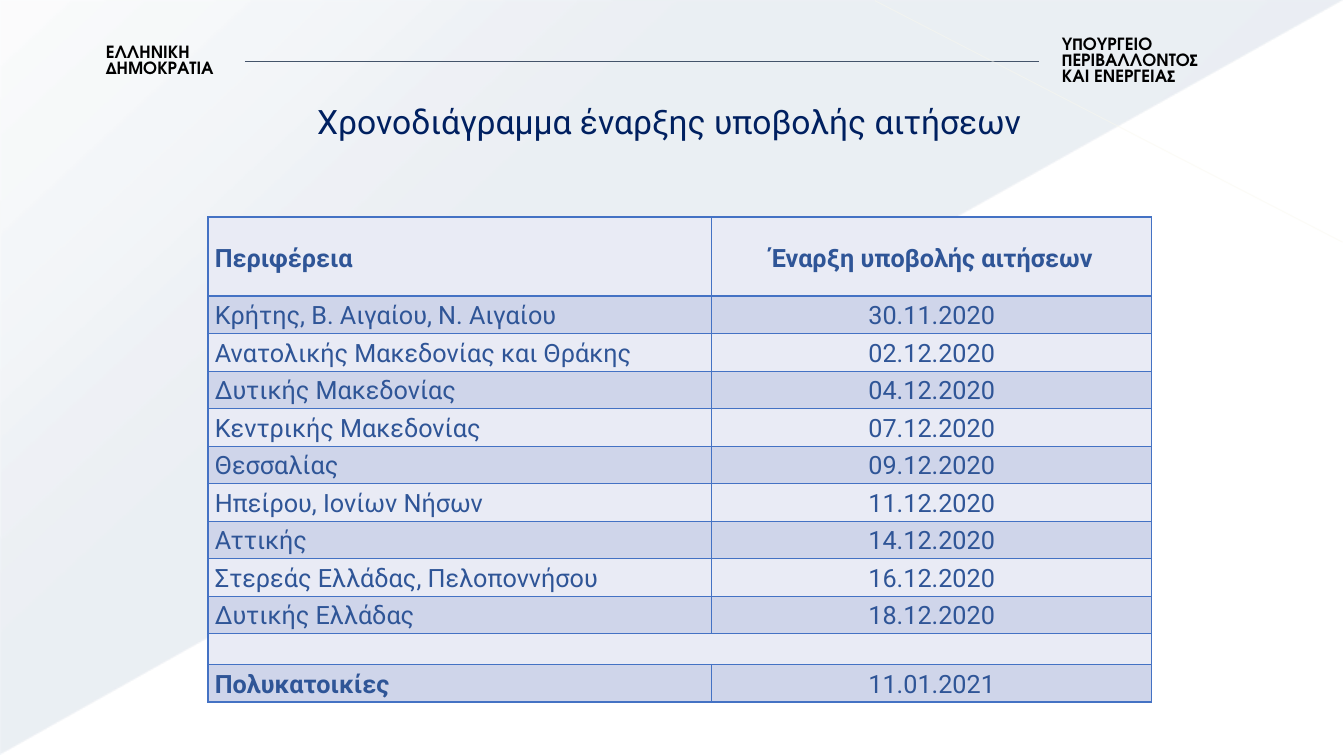
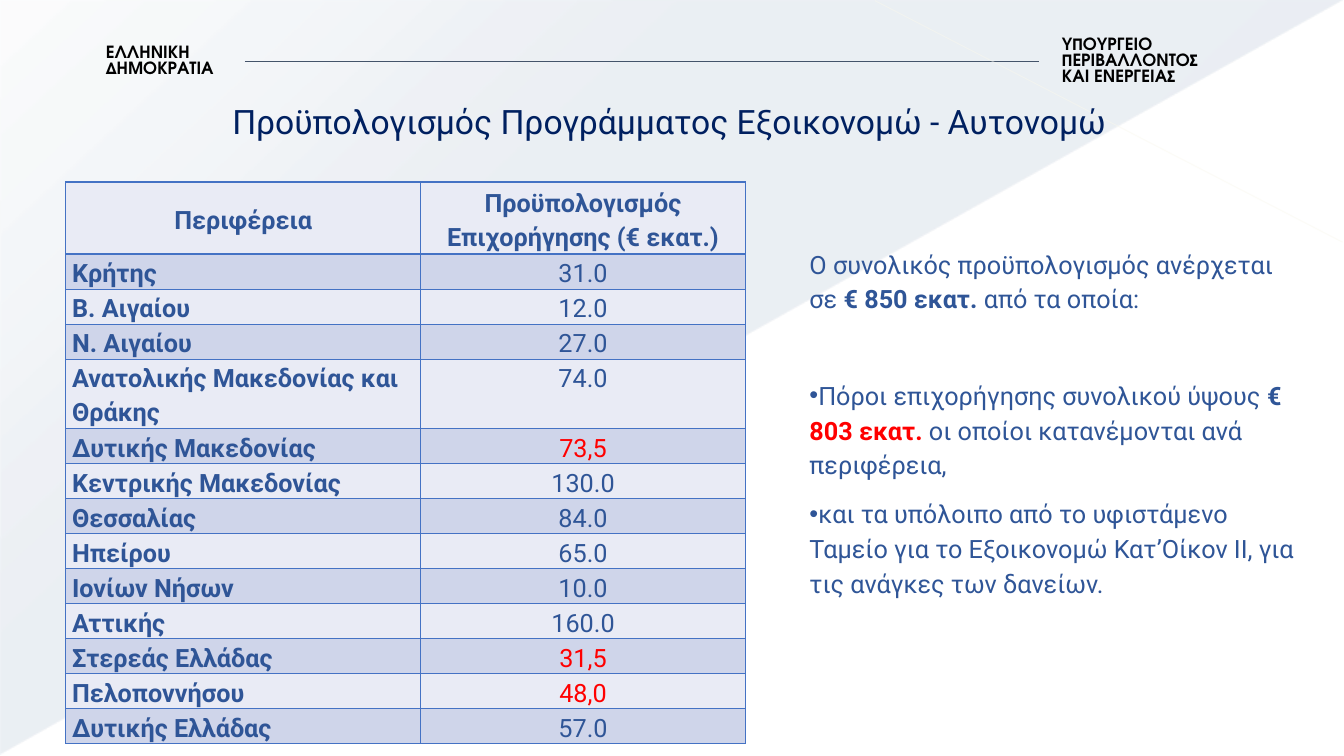
from lxml import etree
from pptx import Presentation
from pptx.dml.color import RGBColor
from pptx.enum.shapes import MSO_CONNECTOR, MSO_SHAPE
from pptx.enum.text import MSO_ANCHOR, MSO_AUTO_SIZE, PP_ALIGN
from pptx.oxml import parse_xml
from pptx.oxml.ns import nsdecls, qn
from pptx.util import Pt

LEFT, CENTER = PP_ALIGN.LEFT, PP_ALIGN.CENTER
TOP, MIDDLE = MSO_ANCHOR.TOP, MSO_ANCHOR.MIDDLE
NO_FIT = MSO_AUTO_SIZE.NONE

COLORS = {
    "title": "002060",
    "text": "2F5597",
    "alert": "FF0000",
    "black": "000000",
    "rule": "44546A",
    "ray": "FAF8EE",
    "wedge": "1F497D",
    "border": "4472C4",
    "light": "E9EBF5",
    "dark": "CFD5EA",
}
BODY_FONT = "Roboto"
HEADER_FONT = "TeX Gyre Adventor"


def format_para(para, align, line_spacing, after=0, before=0):
    para.alignment = align
    para.line_spacing = line_spacing
    para.space_before = Pt(before)
    para.space_after = Pt(after)


def format_span(span, size=18, color="text", bold=False, font=BODY_FONT):
    span.font.name = font
    span.font.size = Pt(size)
    span.font.bold = bold
    span.font.color.rgb = RGBColor.from_string(COLORS[color])


tables = [
    {
        "title": "Χρονοδιάγραμμα έναρξης υποβολής αιτήσεων",
        "left": 148.5, "top": 155, "columns": [360, 314], "inset": 5,
        "heights": [56.5] + [26.8] * 9 + [22, 26.8],
        "header_align": LEFT, "bold_rows": [0, 11],
        "rows": [
            ("Περιφέρεια", "Έναρξη υποβολής αιτήσεων"),
            ("Κρήτης, Β. Αιγαίου, Ν. Αιγαίου", "30.11.2020"),
            ("Ανατολικής Μακεδονίας και Θράκης", "02.12.2020"),
            ("Δυτικής Μακεδονίας", "04.12.2020"),
            ("Κεντρικής Μακεδονίας", "07.12.2020"),
            ("Θεσσαλίας", "09.12.2020"),
            ("Ηπείρου, Ιονίων Νήσων", "11.12.2020"),
            ("Αττικής", "14.12.2020"),
            ("Στερεάς Ελλάδας, Πελοποννήσου", "16.12.2020"),
            ("Δυτικής Ελλάδας", "18.12.2020"),
            None,
            ("Πολυκατοικίες", "11.01.2021"),
        ],
        "notes": [],
    },
    {
        "title": "Προϋπολογισμός Προγράμματος Εξοικονομώ - Αυτονομώ",
        "left": 47, "top": 130, "columns": [253.5, 232], "inset": 4.5,
        "heights": [51.5] + [24.9] * 3 + [49.5] + [24.9] * 9,
        "header_align": CENTER, "bold_rows": range(14),
        "rows": [
            ("Περιφέρεια", "Προϋπολογισμός Επιχορήγησης (€ εκατ.)"),
            ("Κρήτης", "31.0"),
            ("Β. Αιγαίου", "12.0"),
            ("Ν. Αιγαίου", "27.0"),
            ("Ανατολικής Μακεδονίας και Θράκης", "74.0"),
            ("Δυτικής Μακεδονίας", "73,5"),
            ("Κεντρικής Μακεδονίας", "130.0"),
            ("Θεσσαλίας", "84.0"),
            ("Ηπείρου", "65.0"),
            ("Ιονίων Νήσων", "10.0"),
            ("Αττικής", "160.0"),
            ("Στερεάς Ελλάδας", "31,5"),
            ("Πελοποννήσου", "48,0"),
            ("Δυτικής Ελλάδας", "57.0"),
        ],
        "notes": [
            (False, 0, [
                ("Ο συνολικός προϋπολογισμός ανέρχεται σε ", "text", False),
                ("€ 850 εκατ. ", "text", True),
                ("από τα οποία:", "text", False),
            ]),
            (True, 34, [
                ("Πόροι επιχορήγησης συνολικού ύψους ", "text", False),
                ("€ ", "text", True),
                ("803 εκατ. ", "alert", True),
                ("οι οποίοι κατανέμονται ανά περιφέρεια,", "text", False),
            ]),
            (True, 0, [
                ("και τα υπόλοιπο από το υφιστάμενο Ταμείο για το Εξοικονομώ "
                 "Κατ’Οίκον ΙΙ, για τις ανάγκες των δανείων.", "text", False),
            ]),
        ],
    },
]

deck = Presentation()
deck.slide_width, deck.slide_height = Pt(960), Pt(540)
layout = deck.slide_layouts[1]
for holder in list(layout.placeholders):
    if holder.placeholder_format.idx >= 10:
        holder.element.getparent().remove(holder.element)
layout_title, layout_body = layout.placeholders
for holder, (left, top, width, height) in (
    (layout_title, (64, 67.5, 828, 42)),
    (layout_body, (571, 171, 361.5, 263.5)),
):
    holder.left, holder.top = Pt(left), Pt(top)
    holder.width, holder.height = Pt(width), Pt(height)

pages = [deck.slides.add_slide(layout) for _ in tables]
shapes = pages[0].shapes

wedge = shapes.add_shape(MSO_SHAPE.RIGHT_TRIANGLE, Pt(0.5), Pt(0.5), Pt(958.5), Pt(538.5))
wedge.shadow.inherit = False
wedge.line.fill.background()
wedge.rotation = 180
wedge.element.spPr.find(qn("a:xfrm")).set("flipH", "1")
stops = "".join(
    f'<a:gs pos="{place * 1000}"><a:srgbClr val="{COLORS["wedge"]}">'
    f'<a:alpha val="{alpha * 1000}"/></a:srgbClr></a:gs>'
    for place, alpha in ((0, 10), (70, 8), (100, 1))
)
gradient = parse_xml(
    f'<a:gradFill {nsdecls("a")} rotWithShape="1"><a:gsLst>{stops}</a:gsLst>'
    f'<a:lin ang="{133 * 60000}" scaled="0"/></a:gradFill>'
)
wedge.element.spPr.find(qn("a:prstGeom")).addnext(gradient)
frame_parts = [wedge]

for color, weight, ends in (
    ("rule", 1, (175, 44, 742, 44)),
    ("ray", 0.75, (959, 173, 625, 0.5)),
):
    line = shapes.add_connector(MSO_CONNECTOR.STRAIGHT, *[Pt(end) for end in ends])
    line.line.color.rgb = RGBColor.from_string(COLORS[color])
    line.line.width = Pt(weight)
    etree.SubElement(line.element.spPr, qn("a:effectLst"))
    if color == "ray":
        tint = next(line.element.spPr.iter(qn("a:srgbClr")))
        etree.SubElement(tint, qn("a:alpha")).set("val", "45000")
    frame_parts.append(line)

for text, left, top, height in (
    ("ΥΠΟΥΡΓΕΙΟ ΠΕΡΙΒΑΛΛΟΝΤΟΣ ΚΑΙ ΕΝΕΡΓΕΙΑΣ", 751.5, 23, 42.5),
    ("ΕΛΛΗΝΙΚΗ ΔΗΜΟΚΡΑΤΙΑ", 68.5, 29, 30),
):
    box = shapes.add_textbox(Pt(left), Pt(top), Pt(133), Pt(height))
    box.text_frame.word_wrap = True
    box.text_frame.text = text
    para = box.text_frame.paragraphs[0]
    format_para(para, LEFT, 0.8)
    format_span(para.runs[0], 12, "black", True, HEADER_FONT)
    frame_parts.append(box)

for part in frame_parts:
    layout_title.element.addprevious(part.element)

for page, content in zip(pages, tables):
    title = page.shapes.title.text_frame
    title.text = content["title"]
    title.auto_size = NO_FIT
    title.vertical_anchor = MIDDLE
    format_para(title.paragraphs[0], CENTER, 0.9)
    format_span(title.paragraphs[0].runs[0], 24, "title")

    rows, columns, heights = content["rows"], content["columns"], content["heights"]
    table = page.shapes.add_table(
        len(rows), 2, Pt(content["left"]), Pt(content["top"]),
        Pt(sum(columns)), Pt(sum(heights)),
    ).table
    table.first_row = table.horz_banding = False
    for column, width in zip(table.columns, columns):
        column.width = Pt(width)
    for index, (row, height) in enumerate(zip(rows, heights)):
        table.rows[index].height = Pt(height)
        for side in range(2):
            cell = table.cell(index, side)
            cell.margin_left = cell.margin_right = Pt(content["inset"])
            cell.margin_top = Pt(0.75 if row else 0)
            cell.margin_bottom = Pt(0)
            cell.vertical_anchor = TOP if index else MIDDLE
            for edge in ("lnL", "lnR", "lnT", "lnB"):
                cell.fill._xPr.append(parse_xml(
                    f'<a:{edge} {nsdecls("a")} w="12700"><a:solidFill>'
                    f'<a:srgbClr val="{COLORS["border"]}"/></a:solidFill></a:{edge}>'
                ))
            cell.fill.solid()
            cell.fill.fore_color.rgb = RGBColor.from_string(COLORS["dark" if index % 2 else "light"])
            if row:
                cell.text_frame.text = row[side]
                para = cell.text_frame.paragraphs[0]
                first_align = LEFT if index else content["header_align"]
                format_para(para, CENTER if side else first_align, 1.15, 10)
                bold = index == 0 or (side == 0 and index in content["bold_rows"])
                color = "alert" if side and "," in row[side] else "text"
                format_span(para.runs[0], color=color, bold=bold)
        if row is None:
            table.cell(index, 0).merge(table.cell(index, 1))

    body = page.placeholders[1]
    if not content["notes"]:
        body.element.getparent().remove(body.element)
        continue
    frame = body.text_frame
    frame.auto_size = NO_FIT
    frame.vertical_anchor = TOP
    for index, (bulleted, before, spans) in enumerate(content["notes"]):
        para = frame.add_paragraph() if index else frame.paragraphs[0]
        format_para(para, LEFT, 1.15, 10, before)
        properties = para._p.get_or_add_pPr()
        properties.set("marL", "0")
        properties.set("indent", "0")
        if bulleted:
            etree.SubElement(properties, qn("a:buChar")).set("char", "•")
        else:
            etree.SubElement(properties, qn("a:buNone"))
        for text, color, bold in spans:
            span = para.add_run()
            span.text = text
            format_span(span, color=color, bold=bold)

deck.save("out.pptx")
